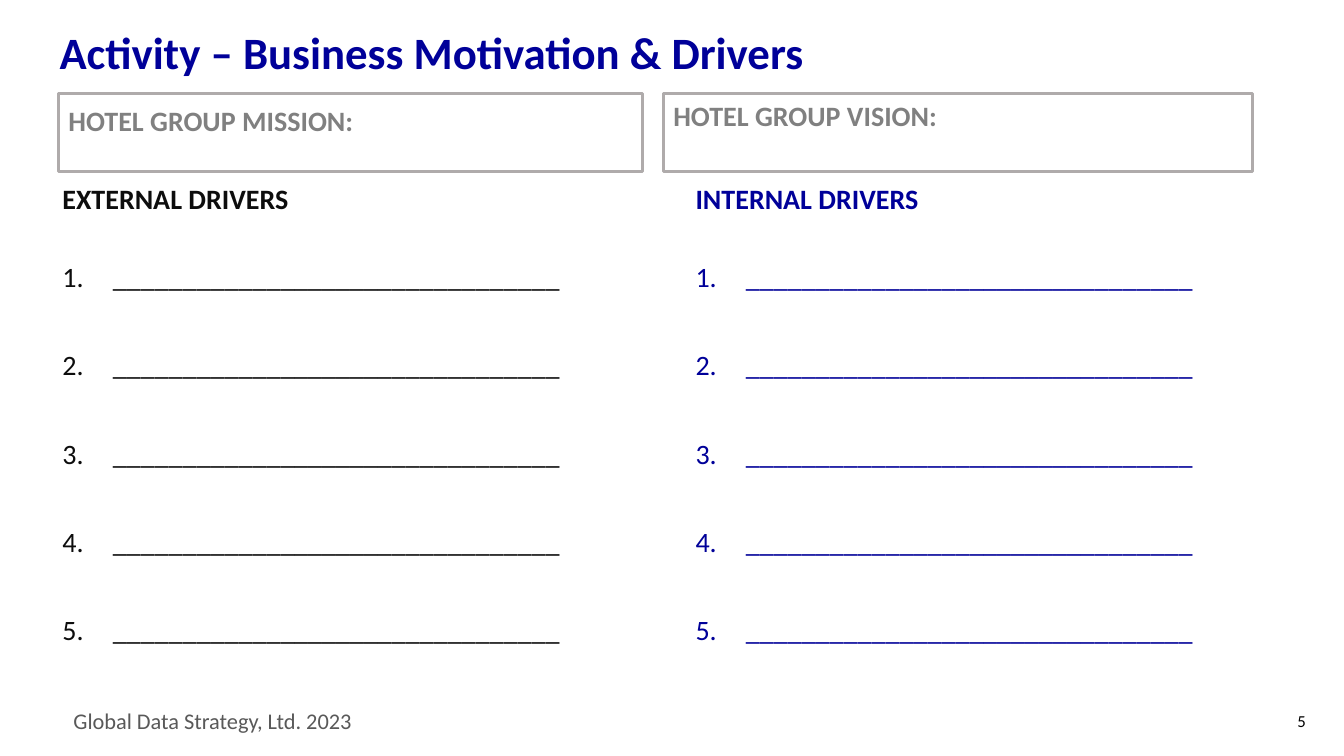
from dataclasses import dataclass

from lxml import etree
from pptx import Presentation
from pptx.dml.color import RGBColor
from pptx.enum.shapes import MSO_SHAPE
from pptx.enum.text import MSO_ANCHOR, MSO_AUTO_SIZE, PP_ALIGN
from pptx.oxml.ns import qn
from pptx.util import Inches, Pt

LEFT, RIGHT = PP_ALIGN.LEFT, PP_ALIGN.RIGHT
TOP, MIDDLE = MSO_ANCHOR.TOP, MSO_ANCHOR.MIDDLE
NO_AUTOFIT = MSO_AUTO_SIZE.NONE
RECTANGLE = MSO_SHAPE.RECTANGLE
TITLE_ONLY = 5


@dataclass(frozen=True)
class Theme:
    font: str = "Calibri"
    navy: str = "000099"
    ink: str = "0D0D0D"
    black: str = "000000"
    label: str = "808080"
    border: str = "AFABAB"
    footer: str = "595959"
    title_size: int = 32
    body_size: int = 20
    footer_size: int = 16
    number_size: int = 12


THEME = Theme()
ANSWER_LINE = "_" * 32
ANSWER_COUNT = 5
LINE_SPACING = 0.9
FIRST_GAP, ANSWER_GAP = 34, 41.5


def set_frame(shape, anchor=TOP, **margins):
    tf = shape.text_frame
    formats = {"word_wrap": True, "auto_size": NO_AUTOFIT,
               "vertical_anchor": anchor, **margins}
    for name, value in formats.items():
        setattr(tf, name, value)
    return tf


def write(p, text, size, color, bold=False, **paragraph_formats):
    for name, value in {"alignment": LEFT, **paragraph_formats}.items():
        setattr(p, name, value)
    r = p.add_run()
    r.text = text
    for name, value in {"name": THEME.font, "size": Pt(size), "bold": bold}.items():
        setattr(r.font, name, value)
    r.font.color.rgb = RGBColor.from_string(color)


def number_paragraph(p):
    """Give the paragraph an automatic number with a hanging indent."""
    pPr = p._p.get_or_add_pPr()
    pPr.set("marL", str(Inches(0.5)))
    pPr.set("indent", str(-Inches(0.5)))
    etree.SubElement(pPr, qn("a:buFont"), typeface="+mj-lt")
    etree.SubElement(pPr, qn("a:buAutoNum"), type="arabicPeriod")


def add_title(s, text):
    title = s.shapes.title
    title.left, title.top = Inches(0.49), Inches(0.12)
    title.width, title.height = Inches(11.5), Inches(0.86)
    tf = set_frame(title, MIDDLE)
    write(tf.paragraphs[0], text, THEME.title_size, THEME.navy, True,
          line_spacing=LINE_SPACING)


def add_statement_box(s, text, left, width, margin_top):
    box = s.shapes.add_shape(RECTANGLE, Inches(left), Inches(0.93),
                             Inches(width), Inches(0.77))
    box.shadow.inherit = False
    box.fill.background()
    box.line.color.rgb = RGBColor.from_string(THEME.border)
    box.line.width = Pt(2)
    tf = set_frame(box, margin_top=Inches(margin_top))
    write(tf.paragraphs[0], text, THEME.body_size, THEME.label, True)


def add_drivers(s, heading, left, color):
    box = s.shapes.add_textbox(Inches(left), Inches(1.79), Inches(5.39), Inches(5.3))
    tf = set_frame(box)
    write(tf.paragraphs[0], heading, THEME.body_size, color, True,
          line_spacing=LINE_SPACING)
    for i in range(ANSWER_COUNT):
        p = tf.add_paragraph()
        number_paragraph(p)
        write(p, ANSWER_LINE, THEME.body_size, color, line_spacing=LINE_SPACING,
              space_before=Pt(ANSWER_GAP if i else FIRST_GAP))


def add_footer_text(s, text, left, width, size, color, alignment=LEFT):
    box = s.shapes.add_textbox(Inches(left), Inches(6.95), Inches(width), Inches(0.4))
    tf = set_frame(box, MIDDLE)
    write(tf.paragraphs[0], text, size, color, alignment=alignment)


def main():
    prs = Presentation()
    prs.slide_width, prs.slide_height = Inches(13.33), Inches(7.5)
    s = prs.slides.add_slide(prs.slide_layouts[TITLE_ONLY])
    add_title(s, "Activity – Business Motivation & Drivers")
    add_statement_box(s, "HOTEL GROUP MISSION:", 0.58, 5.79, 0.1)
    add_statement_box(s, "HOTEL GROUP VISION:", 6.58, 5.84, 0.05)
    add_drivers(s, "EXTERNAL DRIVERS", 0.52, THEME.ink)
    add_drivers(s, "INTERNAL DRIVERS", 6.8, THEME.navy)
    add_footer_text(s, "Global Data Strategy, Ltd. 2023", 0.63, 3.62,
                    THEME.footer_size, THEME.footer)
    add_footer_text(s, "5", 12.42, 0.63, THEME.number_size, THEME.black, RIGHT)
    prs.save("out.pptx")


if __name__ == "__main__":
    main()
